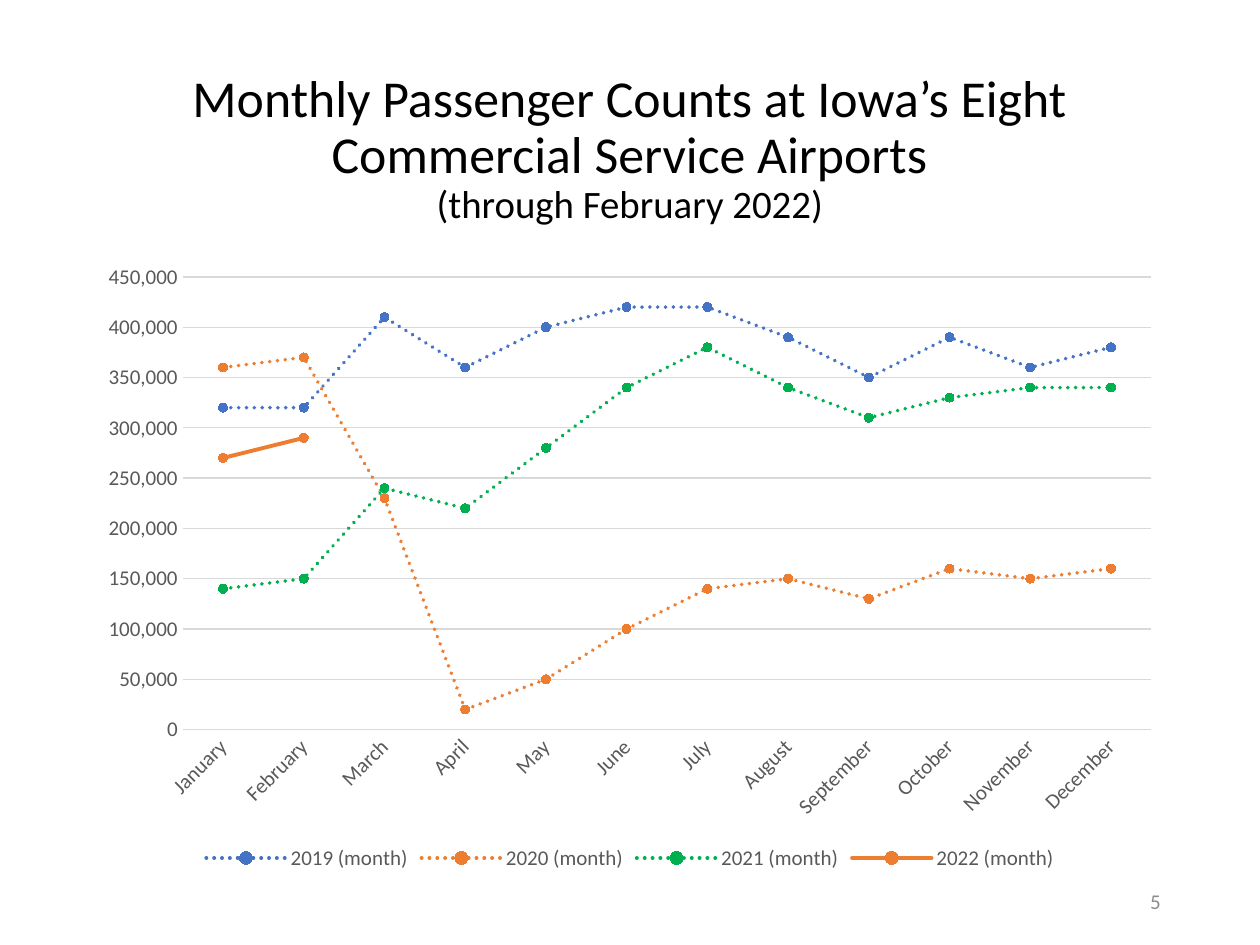
from dataclasses import dataclass

from pptx import Presentation
from pptx import util as u
from pptx.chart import data as cd
from pptx.dml.color import RGBColor
from pptx.enum import chart as ch, dml, text


@dataclass(frozen=True)
class Theme:
    font: str = "Calibri"
    ink: str = "000000"
    label: str = "595959"
    faint: str = "8C8C8C"
    grid: str = "D9D9D9"
    blue: str = "4472C4"
    orange: str = "ED7D31"
    green: str = "00B050"
    head: float = 29.6
    sub: float = 22.2
    small: float = 12


THEME = Theme()

MONTHS = ["January", "February", "March", "April", "May", "June", "July",
          "August", "September", "October", "November", "December"]

# Year, line colour, dotted line, passengers in ten thousands
YEARS = [
    (2019, THEME.blue, True,
     [32, 32, 41, 36, 40, 42, 42, 39, 35, 39, 36, 38]),
    (2020, THEME.orange, True,
     [36, 37, 23, 2, 5, 10, 14, 15, 13, 16, 15, 16]),
    (2021, THEME.green, True,
     [14, 15, 24, 22, 28, 34, 38, 34, 31, 33, 34, 34]),
    (2022, THEME.orange, False, [27, 29] + [None] * 10),
]


def apply(item, **vals):
    for name, val in vals.items():
        setattr(item, name, val)


def style(font, size, color):
    apply(font, name=THEME.font, size=u.Pt(size), bold=False)
    font.color.rgb = RGBColor.from_string(color)


def stroke(line, color, width):
    line.color.rgb = RGBColor.from_string(color)
    line.width = u.Pt(width)


def add_text(slide, box, lines, align, anchor, space=1.0):
    """Add a text box; lines holds (words, size, color) per paragraph."""
    frame = slide.shapes.add_textbox(*map(u.Cm, box)).text_frame
    apply(frame, word_wrap=True, vertical_anchor=anchor)
    for i, (words, size, color) in enumerate(lines):
        para = frame.add_paragraph() if i else frame.paragraphs[0]
        apply(para, alignment=align, line_spacing=space)
        run = para.add_run()
        run.text = words
        style(run.font, size, color)


def style_axes(chart):
    cat, val = chart.category_axis, chart.value_axis
    for axis in (cat, val):
        apply(axis, major_tick_mark=ch.XL_TICK_MARK.NONE,
              minor_tick_mark=ch.XL_TICK_MARK.NONE)
        style(axis.tick_labels.font, THEME.small, THEME.label)
    stroke(cat.format.line, THEME.grid, 0.75)
    cat._element.txPr.bodyPr.set("rot", "-2700000")
    apply(val, minimum_scale=0, maximum_scale=450000, major_unit=50000,
          has_major_gridlines=True)
    apply(val.tick_labels, number_format="#,##0",
          number_format_is_linked=False)
    val.format.line.fill.background()
    stroke(val.major_gridlines.format.line, THEME.grid, 0.75)


def style_line(series, color, dotted):
    series.smooth = False
    stroke(series.format.line, color, 2.25)
    series._element.get_or_add_spPr().get_or_add_ln().set("cap", "rnd")
    if dotted:
        series.format.line.dash_style = dml.MSO_LINE.ROUND_DOT
    mark = series.marker
    apply(mark, style=ch.XL_MARKER_STYLE.CIRCLE, size=5)
    mark.format.fill.solid()
    mark.format.fill.fore_color.rgb = RGBColor.from_string(color)
    stroke(mark.format.line, color, 0.75)


def add_lines(slide, box):
    data = cd.CategoryChartData(number_format="#,##0")
    data.categories = MONTHS
    for year, _, _, counts in YEARS:
        data.add_series(f"{year} (month)",
                        [n and n * 10000 for n in counts])
    chart = slide.shapes.add_chart(
        ch.XL_CHART_TYPE.LINE_MARKERS, *map(u.Cm, box), data).chart
    apply(chart, has_title=False, has_legend=True)
    style(chart.font, 10, THEME.ink)
    apply(chart.legend, position=ch.XL_LEGEND_POSITION.BOTTOM,
          include_in_layout=False)
    style(chart.legend.font, THEME.small, THEME.label)
    plot = chart.plots[0]
    plot.vary_by_categories = False
    style_axes(chart)
    for series, (_, color, dotted, _) in zip(plot.series, YEARS):
        style_line(series, color, dotted)


def main():
    deck = Presentation()
    apply(deck, slide_width=u.Cm(25.4), slide_height=u.Cm(19.05))
    slide = deck.slides.add_slide(deck.slide_layouts[6])
    add_lines(slide, (1.75, 5.08, 21.9, 12.57))
    add_text(slide, (17.93, 17.65, 5.72, 1.02),
             [("5", THEME.small, THEME.faint)],
             text.PP_ALIGN.RIGHT, text.MSO_ANCHOR.MIDDLE)
    add_text(slide, (1.75, 1.02, 21.9, 3.68),
             [("Monthly Passenger Counts at Iowa’s Eight "
               "Commercial Service Airports", THEME.head, THEME.ink),
              ("(through February 2022)", THEME.sub, THEME.ink)],
             text.PP_ALIGN.CENTER, text.MSO_ANCHOR.BOTTOM, 0.9)
    deck.save("out.pptx")


if __name__ == "__main__":
    main()
